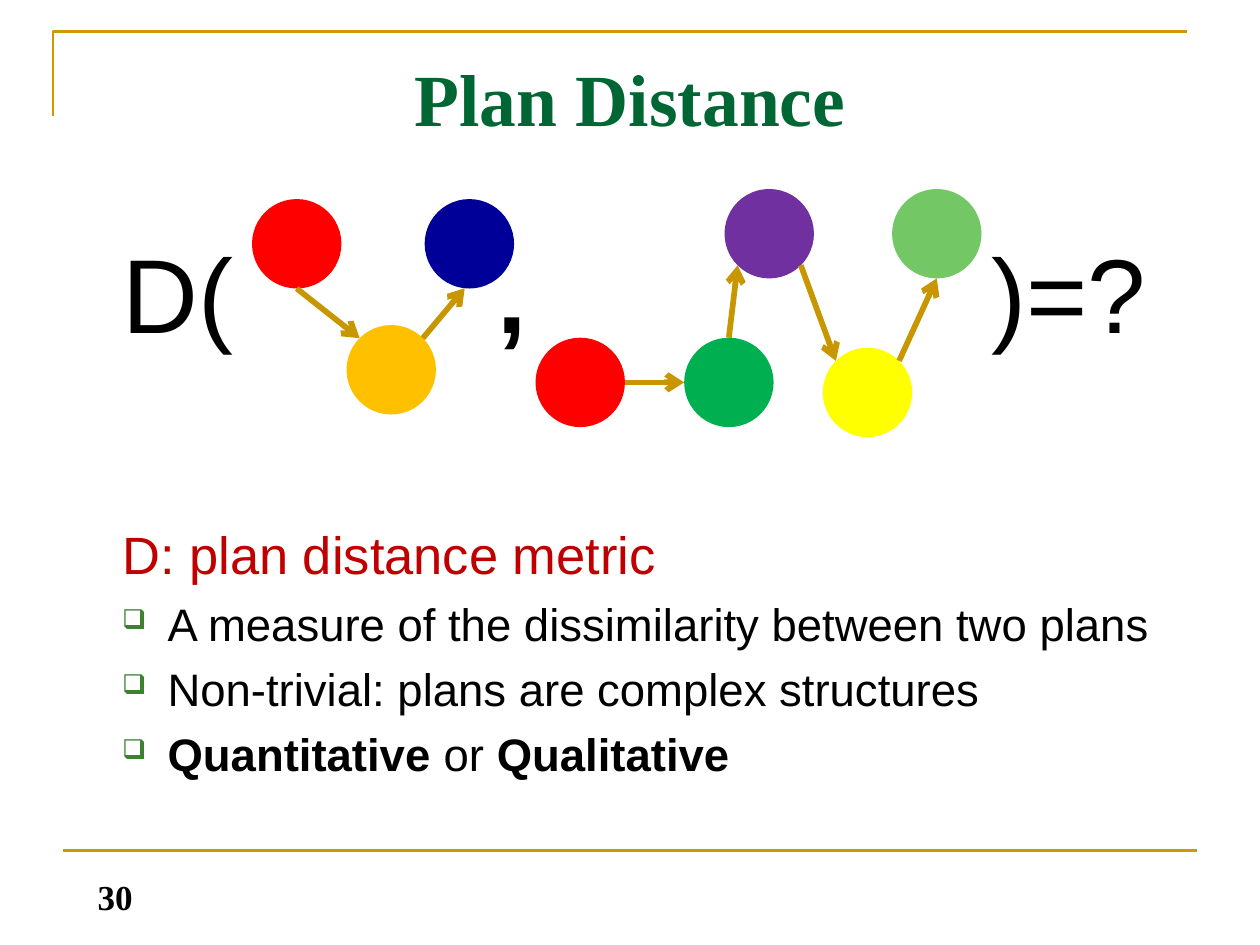
from dataclasses import dataclass
from math import cos, radians, sin

from lxml.etree import SubElement
from pptx import Presentation
from pptx.dml.color import RGBColor
from pptx.enum.shapes import MSO_CONNECTOR, MSO_SHAPE
from pptx.enum.text import MSO_ANCHOR, PP_ALIGN
from pptx.oxml.ns import qn
from pptx.util import Inches, Pt

COLUMNS, ROWS = 100, 75


@dataclass(frozen=True)
class Theme:
    heading_font: str = "Times New Roman"
    body_font: str = "Arial"
    heading: str = "006633"
    text: str = "000000"
    term: str = "C00000"
    bullet: str = "3B812F"
    frame: str = "CC9900"
    arrow: str = "C89600"
    title_size: float = 42
    formula_size: float = 60
    term_size: float = 30
    bullet_size: float = 26
    number_size: float = 20
    frame_width: float = 1.5
    arrow_width: float = 3.25


class SlideBuilder:
    """Draws on one slide; lengths are grid columns and rows."""

    def __init__(self, presentation, theme):
        self.theme = theme
        self.slide = presentation.slides.add_slide(presentation.slide_layouts[6])
        self.column = presentation.slide_width / COLUMNS
        self.row = presentation.slide_height / ROWS

    def place(self, left, top, width, height):
        return [round(value * unit) for value, unit in
                zip((left, top, width, height), (self.column, self.row) * 2)]

    def text_box(self, box, **frame_format):
        text_frame = self.slide.shapes.add_textbox(*self.place(*box)).text_frame
        for name, value in {"word_wrap": True, **frame_format}.items():
            setattr(text_frame, name, value)
        return text_frame

    def paragraph(self, text_frame, runs, size, color, font=None, bullet=None, tabs=(), **paragraph_format):
        """Fill the empty first paragraph or add one; runs are (text, bold) pairs."""
        paragraph = text_frame.paragraphs[0]
        if paragraph.runs:
            paragraph = text_frame.add_paragraph()
        for name, value in paragraph_format.items():
            setattr(paragraph, name, value)
        if bullet:
            self.add_bullet(paragraph, bullet)
        if tabs:
            tab_list = SubElement(paragraph._p.get_or_add_pPr(), qn("a:tabLst"))
            for position in tabs:
                SubElement(tab_list, qn("a:tab"), pos=str(round(position * self.column)), algn="l")
        for text, bold in runs:
            run = paragraph.add_run()
            run.text = text
            run.font.color.rgb = RGBColor.from_string(color)
            run_format = {"size": Pt(size), "bold": bold, "name": font or self.theme.body_font}
            for name, value in run_format.items():
                setattr(run.font, name, value)

    def add_bullet(self, paragraph, character, indent=3.6):
        properties = paragraph._p.get_or_add_pPr()
        distance = round(indent * self.column)
        properties.set("marL", str(distance))
        properties.set("indent", str(-distance))
        bullet_color = SubElement(properties, qn("a:buClr"))
        SubElement(bullet_color, qn("a:srgbClr"), val=self.theme.bullet)
        SubElement(properties, qn("a:buSzPct"), val="60000")
        SubElement(properties, qn("a:buChar"), char=character)

    def circle(self, left, top, diameter, color):
        shape = self.slide.shapes.add_shape(MSO_SHAPE.OVAL, *self.place(left, top, diameter, diameter))
        shape.shadow.inherit = False
        shape.fill.solid()
        shape.fill.fore_color.rgb = RGBColor.from_string(color)
        shape.line.fill.background()

    def line(self, start, end, color, width, arrowhead=False):
        connector = self.slide.shapes.add_connector(
            MSO_CONNECTOR.STRAIGHT, *self.place(*start, *end))
        connector.line.color.rgb = RGBColor.from_string(color)
        connector.line.width = Pt(width)
        if arrowhead:
            SubElement(connector.line._get_or_add_ln(), qn("a:tailEnd"), type="arrow")
        SubElement(connector._element.spPr, qn("a:effectLst"))

    def corner(self, *points):
        """Open line through the points."""
        scaled = [(x * self.column, y * self.row) for x, y in points]
        builder = self.slide.shapes.build_freeform(*scaled[0])
        builder.add_line_segments(scaled[1:], close=False)
        shape = builder.convert_to_shape()
        shape.shadow.inherit = False
        shape.fill.background()
        shape.line.color.rgb = RGBColor.from_string(self.theme.frame)
        shape.line.width = Pt(self.theme.frame_width)


DIAMETER = 7.1
STEPS = {
    "first start": (20, 15.8, "FF0000"),
    "first middle": (27.5, 25.8, "FFC000"),
    "first goal": (33.7, 15.8, "000099"),
    "second start": (42.5, 26.8, "FF0000"),
    "second green": (54.3, 26.8, "00B050"),
    "second purple": (57.5, 15, "7030A0"),
    "second yellow": (65.3, 27.6, "FFFF00"),
    "second goal": (70.8, 15, "73C764"),
}
# Angles run clockwise from the right-hand side of a circle.
ARROWS = [
    ("first start", 90, "first middle", 225),
    ("first middle", 315, "first goal", 96),
    ("second start", 0, "second green", 180),
    ("second green", 270, "second purple", 135),
    ("second purple", 45, "second yellow", 225),
    ("second yellow", 315, "second goal", 90),
]
BULLETS = [
    [("A measure of the dissimilarity between two plans", False)],
    [("Non-trivial: plans are complex structures", False)],
    [("Quantitative ", True), ("or ", False), ("Qualitative", True)],
]


def rim_point(step, angle):
    left, top, _ = STEPS[step]
    radius = DIAMETER / 2
    return (left + radius * (1 + cos(radians(angle))),
            top + radius * (1 + sin(radians(angle))))


def main():
    presentation = Presentation()
    presentation.slide_width, presentation.slide_height = Inches(10), Inches(7.5)
    theme = Theme()
    builder = SlideBuilder(presentation, theme)

    builder.corner((4.2, 9.2), (4.2, 2.5), (94.2, 2.5))
    builder.line((5, 67.5), (95, 67.5), theme.frame, theme.frame_width)

    title = builder.text_box((5, 3, 90, 12.5), margin_top=Inches(0.12))
    builder.paragraph(title, [("Plan Distance", True)], theme.title_size, theme.heading,
                      theme.heading_font, alignment=PP_ALIGN.CENTER)

    body = builder.text_box((5, 16.7, 92.5, 51.7), margin_left=Inches(0.47), margin_top=Inches(0.14))
    builder.paragraph(body, [("D(\t", False), (",\t", True), (")=?", False)],
                      theme.formula_size, theme.text, tabs=(29.8, 69))
    builder.paragraph(body, [("D: plan distance metric", False)],
                      theme.term_size, theme.term, space_before=Pt(96))
    for runs in BULLETS:
        builder.paragraph(body, runs, theme.bullet_size, theme.text, bullet="❑", space_before=Pt(6))

    for left, top, color in STEPS.values():
        builder.circle(left, top, DIAMETER, color)
    for source, source_angle, target, target_angle in ARROWS:
        builder.line(rim_point(source, source_angle), rim_point(target, target_angle),
                     theme.arrow, theme.arrow_width, arrowhead=True)

    number = builder.text_box((0, 68.3, 18.3, 5), vertical_anchor=MSO_ANCHOR.BOTTOM)
    builder.paragraph(number, [("30", True)], theme.number_size, theme.text,
                      theme.heading_font, alignment=PP_ALIGN.CENTER)

    presentation.save("out.pptx")


if __name__ == "__main__":
    main()
